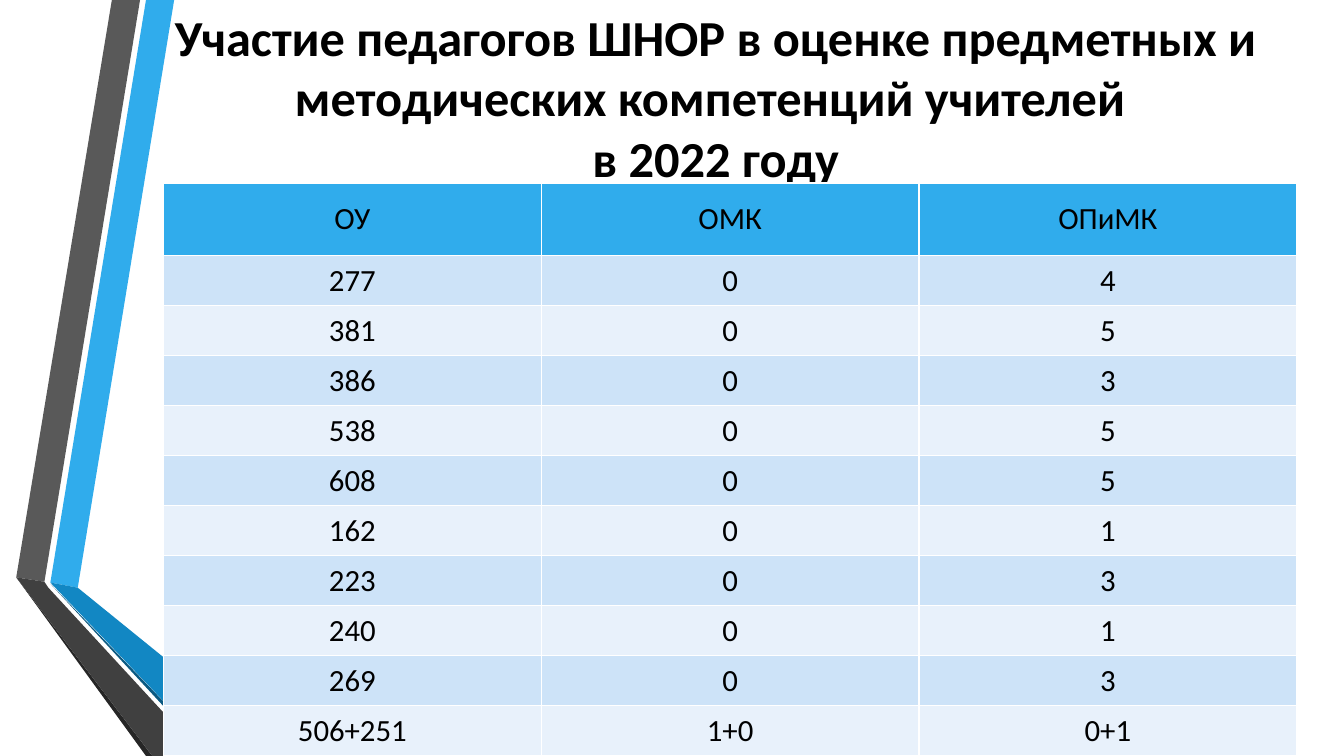
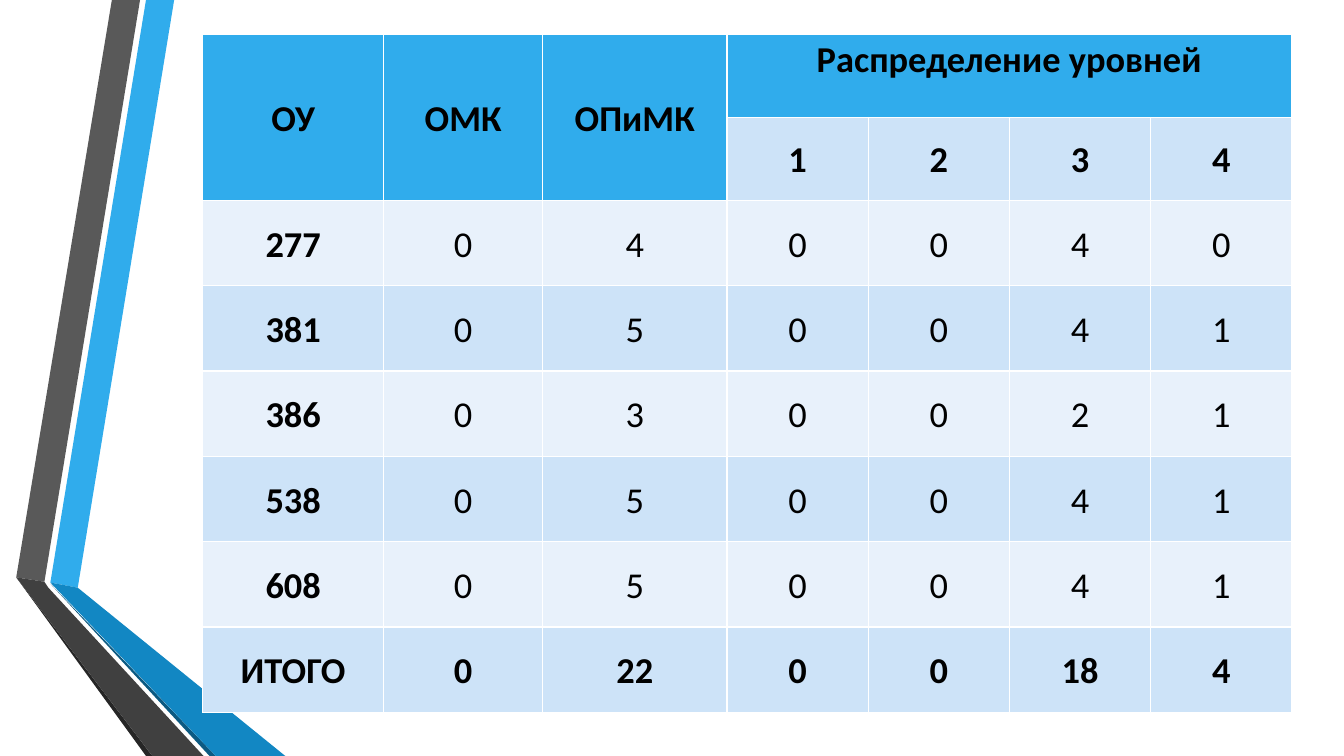
from collections.abc import Callable
from dataclasses import dataclass

from pptx import Presentation
from pptx.dml.color import RGBColor
from pptx.enum.text import MSO_ANCHOR, PP_ALIGN
from pptx.slide import Slide
from pptx.text.text import TextFrame
from pptx.util import Cm, Pt

CENTER = PP_ALIGN.CENTER
TOP = MSO_ANCHOR.TOP
MIDDLE = MSO_ANCHOR.MIDDLE
BLANK_LAYOUT = 6


@dataclass(frozen=True)
class Theme:
    font: str = "Calibri"
    ink: str = "000000"
    header: str = "30ACEC"
    band_dark: str = "CDE3F8"
    band_light: str = "E8F1FB"
    ribbon_blue: str = "30ACEC"
    ribbon_gray: str = "595959"
    fold_black: str = "262626"
    fold_navy: str = "0C5A82"
    fold_blue: str = "1287C3"
    fold_gray: str = "404040"
    title_size: int = 36
    participation_size: int = 22
    levels_size: int = 26


THEME = Theme()


@dataclass(frozen=True)
class Ribbon:
    color: str
    points: tuple[tuple[float, float], ...]


@dataclass(frozen=True)
class Grid:
    left: float
    top: float
    widths: list[float]
    heights: list[float]
    rows: list[list[str]]
    size: int
    is_bold: Callable[[int, int], bool]
    margins: tuple[float, float] = (0.25, 0.13)
    line_spacing: float = 1.0
    merges: tuple[tuple[int, int, int, int], ...] = ()
    top_anchored: tuple[tuple[int, int], ...] = ()


RIBBONS = (
    Ribbon(THEME.ribbon_blue, ((1.27, 14.68), (1.96, 14.81), (4.39, 0), (3.68, 0))),
    Ribbon(THEME.ribbon_gray, ((3.53, 0), (2.82, 0), (0.41, 14.55), (1.12, 14.66))),
    Ribbon(THEME.fold_black, ((0.41, 14.55), (3.68, 19.05), (3.84, 19.05))),
    Ribbon(THEME.fold_navy, ((1.27, 14.71), (5.28, 19.05), (5.44, 19.05))),
    Ribbon(THEME.fold_blue, ((1.27, 14.68), (5.44, 19.05), (7.19, 19.05), (1.96, 14.81))),
    Ribbon(THEME.fold_gray, ((0.41, 14.55), (3.84, 19.05), (5.13, 19.05), (1.22, 14.81), (1.12, 14.66))),
)

TITLE = "Участие педагогов ШНОР в оценке предметных и методических компетенций учителей \vв 2022 году"

PARTICIPATION = Grid(
    left=4.12,
    top=4.61,
    widths=[9.52] * 3,
    heights=[1.83] + [1.26] * 10,
    rows=[
        ["ОУ", "ОМК", "ОПиМК"],
        ["277", "0", "4"],
        ["381", "0", "5"],
        ["386", "0", "3"],
        ["538", "0", "5"],
        ["608", "0", "5"],
        ["162", "0", "1"],
        ["223", "0", "3"],
        ["240", "0", "1"],
        ["269", "0", "3"],
        ["506+251", "1+0", "0+1"],
    ],
    size=THEME.participation_size,
    is_bold=lambda row, column: False,
)

LEVELS = Grid(
    left=5.11,
    top=0.87,
    widths=[4.56, 4.01, 4.64] + [3.56] * 4,
    heights=[2.09] * 2 + [2.15] * 6,
    rows=[
        ["ОУ", "ОМК", "ОПиМК", "Распределение уровней", "", "", ""],
        ["", "", "", "1", "2", "3", "4"],
        ["277", "0", "4", "0", "0", "4", "0"],
        ["381", "0", "5", "0", "0", "4", "1"],
        ["386", "0", "3", "0", "0", "2", "1"],
        ["538", "0", "5", "0", "0", "4", "1"],
        ["608", "0", "5", "0", "0", "4", "1"],
        ["ИТОГО", "0", "22", "0", "0", "18", "4"],
    ],
    size=THEME.levels_size,
    is_bold=lambda row, column: row in (0, 1, 7) or column == 0,
    margins=(0.18, 0),
    line_spacing=1.07,
    merges=((0, 0, 1, 0), (0, 1, 1, 1), (0, 2, 1, 2), (0, 3, 0, 6)),
    top_anchored=((0, 3),),
)


def write_text(frame: TextFrame, text: str, *, size: int, bold: bool, line_spacing: float = 1.0) -> None:
    para = frame.paragraphs[0]
    para.text = text
    para.alignment = CENTER
    para.line_spacing = line_spacing
    for span in para.runs:
        span.font.name = THEME.font
        span.font.size = Pt(size)
        span.font.bold = bold
        span.font.color.rgb = RGBColor.from_string(THEME.ink)


def draw_ribbon(page: Slide, ribbon: Ribbon) -> None:
    start, *others = [(Cm(x), Cm(y)) for x, y in ribbon.points]
    builder = page.shapes.build_freeform(*start)
    builder.add_line_segments(others, close=True)
    shape = builder.convert_to_shape()
    shape.shadow.inherit = False
    shape.fill.solid()
    shape.fill.fore_color.rgb = RGBColor.from_string(ribbon.color)
    shape.line.fill.background()


def draw_title(page: Slide, text: str) -> None:
    box = page.shapes.add_textbox(Cm(4.12), Cm(0), Cm(27.84), Cm(4.88))
    frame = box.text_frame
    frame.word_wrap = True
    frame.vertical_anchor = MIDDLE
    write_text(frame, text, size=THEME.title_size, bold=True)


def row_color(row: int) -> str:
    if row == 0:
        return THEME.header
    return THEME.band_dark if row % 2 else THEME.band_light


def draw_grid(page: Slide, grid: Grid) -> None:
    table = page.shapes.add_table(
        len(grid.heights),
        len(grid.widths),
        Cm(grid.left),
        Cm(grid.top),
        Cm(sum(grid.widths)),
        Cm(sum(grid.heights)),
    ).table
    for column, width in zip(table.columns, grid.widths):
        column.width = Cm(width)
    for row, height in zip(table.rows, grid.heights):
        row.height = Cm(height)
    for first_row, first_column, last_row, last_column in grid.merges:
        table.cell(first_row, first_column).merge(table.cell(last_row, last_column))

    side, edge = map(Cm, grid.margins)
    for row_index, texts in enumerate(grid.rows):
        for column_index, text in enumerate(texts):
            cell = table.cell(row_index, column_index)
            if cell.is_spanned:
                continue
            cell.fill.solid()
            cell.fill.fore_color.rgb = RGBColor.from_string(row_color(row_index))
            cell.margin_left = cell.margin_right = side
            cell.margin_top = cell.margin_bottom = edge
            cell.vertical_anchor = TOP if (row_index, column_index) in grid.top_anchored else MIDDLE
            write_text(
                cell.text_frame,
                text,
                size=grid.size,
                bold=grid.is_bold(row_index, column_index),
                line_spacing=grid.line_spacing,
            )


def main() -> None:
    deck = Presentation()
    deck.slide_width = Cm(33.87)
    deck.slide_height = Cm(19.05)
    for title, grid in ((TITLE, PARTICIPATION), (None, LEVELS)):
        page = deck.slides.add_slide(deck.slide_layouts[BLANK_LAYOUT])
        for ribbon in RIBBONS:
            draw_ribbon(page, ribbon)
        if title:
            draw_title(page, title)
        draw_grid(page, grid)
    deck.save("out.pptx")


if __name__ == "__main__":
    main()
